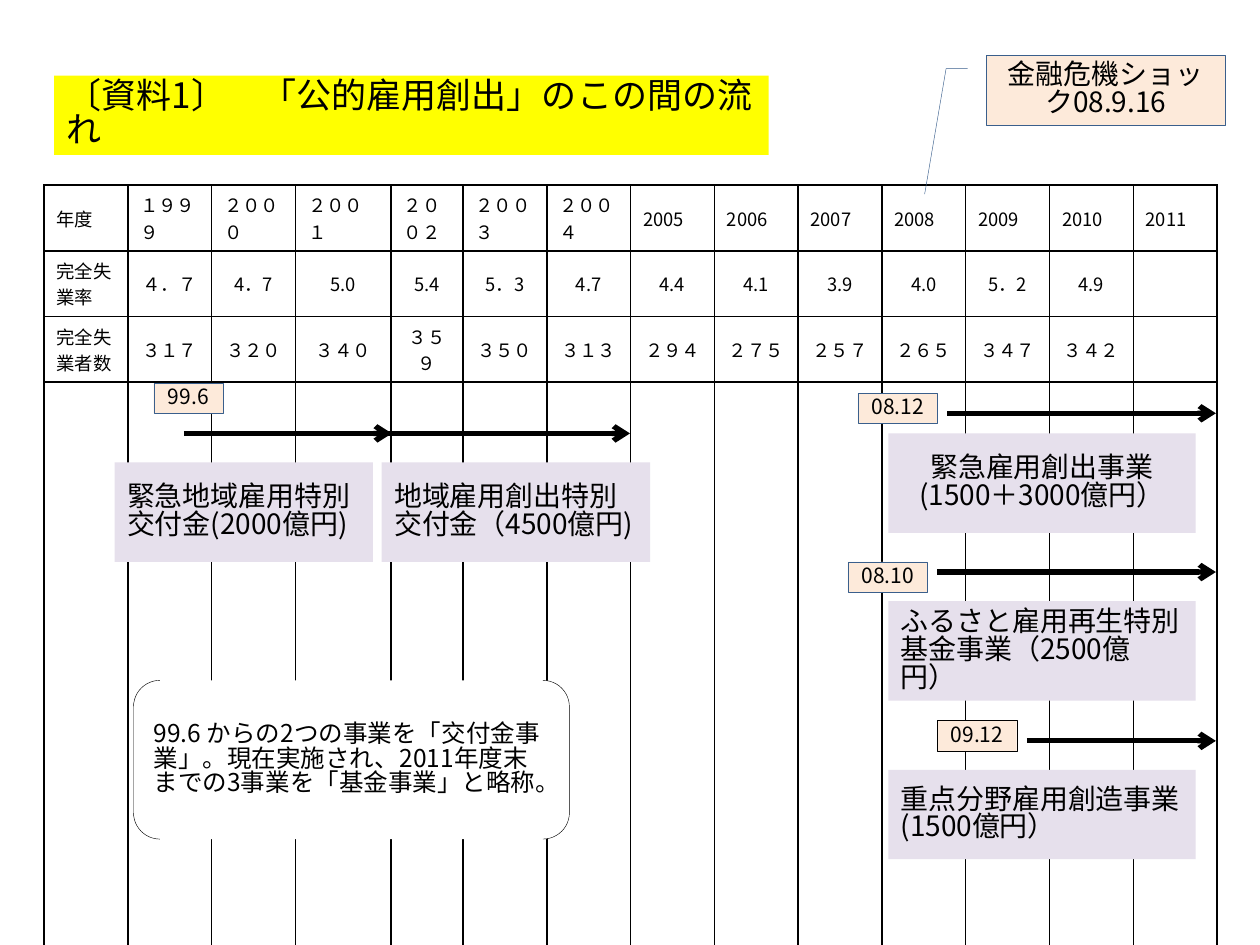
from dataclasses import dataclass

import pptx
import pptx.dml.color
import pptx.enum.shapes
import pptx.enum.text
import pptx.oxml
import pptx.oxml.ns
import pptx.util

Inches = pptx.util.Inches
Pt = pptx.util.Pt
Shape = pptx.enum.shapes.MSO_SHAPE
Align = pptx.enum.text.PP_ALIGN
Anchor = pptx.enum.text.MSO_ANCHOR
Bounds = tuple[float, float, float, float]


@dataclass(frozen=True)
class Theme:
    font: str = "Noto Sans CJK JP"
    ink: str = "000000"
    paper: str = "FFFFFF"
    title_fill: str = "FFFF00"
    programme_fill: str = "E6E0EC"
    tag_fill: str = "FDEADA"
    outline: str = "3A5F8C"
    title_size: float = 20
    body_size: float = 16
    note_size: float = 14
    tag_size: float = 12
    table_size: float = 10.5
    hairline: float = 0.25
    border: float = 1
    arrow: float = 3
    title_spacing: float = 0.8
    box_spacing: float = 0.83


@dataclass(frozen=True)
class Programme:
    """An employment programme: its arrow on the time line and its name box."""
    name: str
    box: Bounds
    arrow_start: float
    arrow_end: float
    arrow_y: float
    align: Align = Align.LEFT


@dataclass(frozen=True)
class DateTag:
    label: str
    left: float
    top: float
    width: float = 0.63
    outline: str = Theme.outline


THEME = Theme()

PROGRAMMES = [
    Programme("緊急地域雇用特別交付金(2000億円)", (0.91, 3.67, 2.05, 0.79), 1.46, 3.11, 3.44),
    Programme("地域雇用創出特別\n交付金（4500億円)", (3.03, 3.67, 2.13, 0.79), 3.03, 5, 3.44),
    Programme("緊急雇用創出事業\n(1500＋3000億円）", (7.05, 3.44, 2.44, 0.79), 7.52, 9.65, 3.28,
              Align.CENTER),
    Programme("ふるさと雇用再生特別基金事業（2500億円）", (7.05, 4.77, 2.44, 0.79), 7.44, 9.65, 4.54),
    Programme("重点分野雇用創造事業(1500億円）", (7.05, 6.11, 2.44, 0.71), 8.15, 9.65, 5.88),
]

DATE_TAGS = [
    DateTag("99.6", 1.22, 3.04, width=0.55),
    DateTag("08.12", 6.81, 3.12),
    DateTag("08.10", 6.73, 4.46),
    DateTag("09.12", 7.44, 5.72, outline=THEME.ink),
]

STATISTICS = [
    ["年度", "１９９９", "２０００", "２００１", "２００２", "２００３", "２００４",
     "2005", "2006", "2007", "2008", "2009", "2010", "2011"],
    ["完全失業率", "４．７", "4．7", "5.0", "5.4", "5．3", "4.7",
     "4.4", "4.1", "3.9", "4.0", "5．2", "4.9", ""],
    ["完全失業者数", "３１７", "３２０", "３４０", "３５９", "３５０", "３１３",
     "２９４", "２７５", "２５７", "２６５", "３４７", "３４２", ""],
]
TABLE_BOUNDS = (0.35, 1.47, 9.31, 5.83)
ROW_HEIGHTS = [0.42, 0.46, 0.46, 0.42, 0.42, 3.65]
SPECIAL_WIDTHS = {3: 0.76, 4: 0.57}


def color(value: str) -> pptx.dml.color.RGBColor:
    return pptx.dml.color.RGBColor.from_string(value)


def write(frame, text: str, size: float, align: Align = Align.LEFT,
          spacing: float | None = None) -> None:
    """Set text, then format every run, for Latin and East Asian letters alike."""
    frame.text = text
    for para in frame.paragraphs:
        para.alignment = align
        para.line_spacing = spacing
        for span in para.runs:
            span.font.name = THEME.font
            span.font.size = Pt(size)
            span.font.bold = False
            span.font.color.rgb = color(THEME.ink)
            east_asian = pptx.oxml.parse_xml(
                f'<a:ea {pptx.oxml.ns.nsdecls("a")} typeface="{THEME.font}"/>')
            span.font._element.find(pptx.oxml.ns.qn("a:latin")).addnext(east_asian)


def add_box(page, bounds: Bounds, text: str, size: float, fill: str,
            outline: str | None = None, align: Align = Align.LEFT,
            kind: Shape = Shape.RECTANGLE):
    box = page.shapes.add_shape(kind, *map(Inches, bounds))
    box.shadow.inherit = False
    box.fill.solid()
    box.fill.fore_color.rgb = color(fill)
    if outline:
        box.line.color.rgb = color(outline)
        box.line.width = Pt(THEME.hairline)
    else:
        box.line.fill.background()
    box.text_frame.word_wrap = True
    box.text_frame.vertical_anchor = Anchor.MIDDLE
    write(box.text_frame, text, size, align, THEME.box_spacing)
    return box


def add_arrow(page, start: float, end: float, y: float) -> None:
    arrow = page.shapes.add_connector(
        pptx.enum.shapes.MSO_CONNECTOR.STRAIGHT, Inches(start), Inches(y), Inches(end), Inches(y))
    arrow.line.color.rgb = color(THEME.ink)
    arrow.line.width = Pt(THEME.arrow)
    namespace = pptx.oxml.ns.nsdecls("a")
    arrow.line._get_or_add_ln().append(
        pptx.oxml.parse_xml(f'<a:tailEnd {namespace} type="arrow"/>'))
    arrow._element.spPr.append(pptx.oxml.parse_xml(f"<a:effectLst {namespace}/>"))


def set_borders(cell, visible: str) -> None:
    """Draw the sides named in visible (L, R, T, B) and clear the others."""
    properties = cell._tc.get_or_add_tcPr()
    for index, side in enumerate("LRTB"):
        paint = (f'<a:solidFill><a:srgbClr val="{THEME.ink}"/></a:solidFill>'
                 if side in visible else "<a:noFill/>")
        properties.insert(index, pptx.oxml.parse_xml(
            f'<a:ln{side} {pptx.oxml.ns.nsdecls("a")} w="{Pt(THEME.border)}">{paint}</a:ln{side}>'))


def add_statistics(page) -> None:
    column_count = len(STATISTICS[0])
    table = page.shapes.add_table(
        len(ROW_HEIGHTS), column_count, *map(Inches, TABLE_BOUNDS)).table
    table.first_row = table.horz_banding = False
    usual_width = ((TABLE_BOUNDS[2] - sum(SPECIAL_WIDTHS.values()))
                   / (column_count - len(SPECIAL_WIDTHS)))
    for index, column in enumerate(table.columns):
        column.width = Inches(SPECIAL_WIDTHS.get(index, usual_width))

    first_open, last = len(STATISTICS), len(ROW_HEIGHTS) - 1
    for row_index, height in enumerate(ROW_HEIGHTS):
        table.rows[row_index].height = Inches(height)
        # The lower rows form one open area, divided by year only
        sides = "LR"
        if row_index <= first_open:
            sides += "T"
        if row_index < first_open or row_index == last:
            sides += "B"
        for column_index in range(column_count):
            cell = table.cell(row_index, column_index)
            cell.fill.background()
            set_borders(cell, sides)
            if row_index < first_open:
                is_value = row_index > 0 and column_index > 0
                if row_index == 0 or is_value:
                    cell.vertical_anchor = Anchor.MIDDLE
                write(cell.text_frame, STATISTICS[row_index][column_index], THEME.table_size,
                      Align.CENTER if is_value else Align.LEFT)


def add_title(page) -> None:
    title = page.shapes.title
    title.left, title.top, title.width, title.height = map(Inches, (0.43, 0.6, 5.67, 0.63))
    title.fill.solid()
    title.fill.fore_color.rgb = color(THEME.title_fill)
    title.text_frame.word_wrap = True
    title.text_frame.auto_size = pptx.enum.text.MSO_AUTO_SIZE.NONE
    title.text_frame.vertical_anchor = Anchor.MIDDLE
    write(title.text_frame, "〔資料1〕　「公的雇用創出」のこの間の流れ", THEME.title_size,
          spacing=THEME.title_spacing)


def main() -> None:
    deck = pptx.Presentation()
    deck.slide_width, deck.slide_height = Inches(10), Inches(7.5)
    page = deck.slides.add_slide(deck.slide_layouts[5])
    add_title(page)
    add_statistics(page)

    # Time line of programmes
    for programme in PROGRAMMES:
        add_arrow(page, programme.arrow_start, programme.arrow_end, programme.arrow_y)
        add_box(page, programme.box, programme.name, THEME.body_size, THEME.programme_fill,
                align=programme.align)
    for tag in DATE_TAGS:
        add_box(page, (tag.left, tag.top, tag.width, 0.24), tag.label, THEME.tag_size,
                THEME.tag_fill, tag.outline, Align.CENTER)

    # Callout pointing at 2008
    callout = add_box(page, (7.83, 0.44, 1.89, 0.55), "金融危機ショック08.9.16", THEME.body_size,
                      THEME.tag_fill, THEME.outline, Align.CENTER, Shape.LINE_CALLOUT_2)
    for index, value in enumerate([0.19, -0.08, 0.19, -0.17, 2, -0.26]):
        callout.adjustments[index] = value

    # Explanatory note
    add_box(page, (1.06, 5.4, 3.46, 1.26),
            "99.6 からの2つの事業を「交付金事業」。現在実施され、2011年度末までの3事業を「基金事業」と略称。",
            THEME.note_size, THEME.paper, THEME.ink, kind=Shape.DOUBLE_BRACKET)
    deck.save("out.pptx")


if __name__ == "__main__":
    main()
